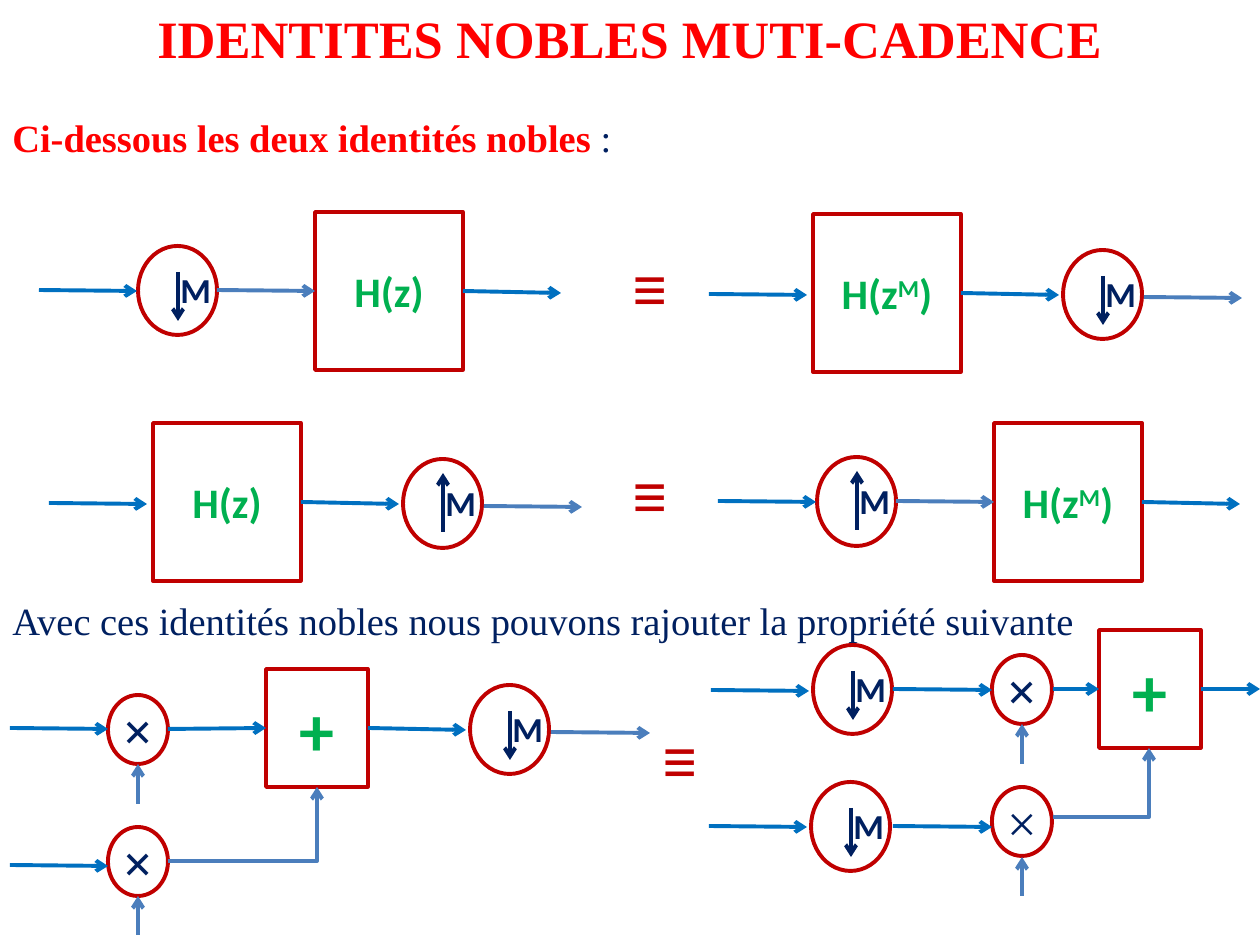
from lxml import etree
from pptx import Presentation
from pptx.dml.color import RGBColor
from pptx.enum.shapes import MSO_CONNECTOR, MSO_SHAPE
from pptx.enum.text import MSO_ANCHOR, PP_ALIGN
from pptx.oxml.ns import qn
from pptx.util import Pt

RECTANGLE, OVAL = MSO_SHAPE.RECTANGLE, MSO_SHAPE.OVAL
STRAIGHT, ELBOW = MSO_CONNECTOR.STRAIGHT, MSO_CONNECTOR.ELBOW
LEFT, CENTER, MIDDLE = PP_ALIGN.LEFT, PP_ALIGN.CENTER, MSO_ANCHOR.MIDDLE

RED = RGBColor(0xFF, 0x00, 0x00)
DARK_RED = RGBColor(0xC0, 0x00, 0x00)
NAVY = RGBColor(0x00, 0x20, 0x60)
GREEN = RGBColor(0x00, 0xB0, 0x50)
BLUE = RGBColor(0x00, 0x70, 0xC0)
STEEL = RGBColor(0x4B, 0x7E, 0xBC)

PX = 914400 / 126
JOIN_TOLERANCE = 4

TITLE = {"name": "Times New Roman", "size": 30, "color": RED, "bold": True}
LEAD = {"name": "Times New Roman", "size": 22, "color": RED, "bold": True}
BODY = {**LEAD, "color": NAVY, "bold": False}
RATE = {"name": "Calibri", "size": 20, "color": NAVY, "bold": True}
FILTER = {"name": "Calibri", "size": 24, "color": GREEN, "bold": True}
POWER = {**FILTER, "baseline": 30000}
SUM = {**FILTER, "size": 40}
EQUIVALENT = {"name": "Calibri", "size": 40, "color": DARK_RED, "bold": False}
PRODUCT = {"name": "Times New Roman", "size": 30, "color": NAVY, "bold": True}
LIGHT_PRODUCT = {**PRODUCT, "bold": False}

# left, top, width, height, alignment, runs
TEXTS = [
    (0, 0, 1260, 77, CENTER, [("IDENTITES NOBLES MUTI-CADENCE", TITLE)]),
    (0, 108, 1131, 59, LEFT, [("Ci-dessous les deux identités nobles ", LEAD), (":", BODY)]),
    (0, 591, 1260, 59, LEFT,
     [("Avec ces identités nobles nous pouvons rajouter la propriété suivante", BODY)]),
]
EQUIVALENCES = [(620, 237), (620, 444), (650, 709)]

H_Z = [("H(z)", FILTER)]
H_ZM = [("H(z", FILTER), ("M", POWER), (")", FILTER)]
FILTER_SIZE, SUM_SIZE = (148, 158), (102, 118)
# left, top, size, runs
BLOCKS = [
    (315, 212, FILTER_SIZE, H_Z),
    (813, 214, FILTER_SIZE, H_ZM),
    (153, 423, FILTER_SIZE, H_Z),
    (994, 423, FILTER_SIZE, H_ZM),
    (266, 669, SUM_SIZE, [("+", SUM)]),
    (1099, 630, SUM_SIZE, [("+", SUM)]),
]

RATE_SIZE, PRODUCT_SIZE = (79, 89), (60, 69)
DOWN, UP = (26, 75), (73, 14)  # arrow start and end below the oval's top
RATE_CHANGERS = [
    (138, 246, DOWN), (1063, 250, DOWN), (403, 459, UP), (817, 457, UP),
    (470, 685, DOWN), (813, 645, DOWN), (811, 782, DOWN),
]
PRODUCTS = [
    (108, 695, PRODUCT), (108, 827, PRODUCT),
    (992, 655, PRODUCT), (992, 787, LIGHT_PRODUCT),
]

# from x, from y, to x, to y
WIRES = {
    STEEL: [
        (217, 290, 315, 291), (1144, 297, 1242, 298), (484, 506, 582, 507),
        (896, 501, 994, 502), (551, 732, 650, 733),
        (138, 804, 138, 764), (138, 935, 138, 896),
        (1022, 764, 1022, 724), (1022, 896, 1022, 857),
    ],
    BLUE: [
        (39, 290, 137, 291), (463, 292, 561, 293), (709, 294, 807, 295),
        (961, 294, 1059, 295), (49, 503, 147, 504), (301, 503, 399, 504),
        (718, 501, 816, 502), (1142, 503, 1240, 504), (10, 728, 108, 729),
        (168, 729, 266, 730), (368, 729, 466, 730), (10, 865, 108, 866),
        (711, 690, 809, 691), (893, 689, 992, 690), (1053, 689, 1102, 690),
        (1201, 690, 1260, 689), (709, 826, 807, 827), (893, 826, 992, 827),
    ],
}
ELBOWS = [(168, 861, 317, 787), (1053, 817, 1149, 748)]


def emu(*lengths):
    return [round(length * PX) for length in lengths]


def write(frame, runs, align):
    para = frame.paragraphs[0]
    para.alignment = align
    for text, style in runs:
        span = para.add_run()
        span.text = text
        for key, value in style.items():
            if key == "color":
                span.font.color.rgb = value
            elif key == "baseline":
                span._r.get_or_add_rPr().set("baseline", str(value))
            else:
                setattr(span.font, key, Pt(value) if key == "size" else value)


def add_text(page, left, top, width, height, align, runs):
    frame = page.shapes.add_textbox(*emu(left, top, width, height)).text_frame
    frame.word_wrap = True
    write(frame, runs, align)


def add_outline(page, kind, left, top, size, weight, runs=()):
    box = page.shapes.add_shape(kind, *emu(left, top, *size))
    box.shadow.inherit = False
    box.fill.background()
    box.line.color.rgb = DARK_RED
    box.line.width = Pt(weight)
    frame = box.text_frame
    frame.word_wrap = False
    frame.vertical_anchor = MIDDLE
    for side in ("left", "top", "right", "bottom"):
        setattr(frame, f"margin_{side}", 0)
    write(frame, runs, CENTER)
    return box


def add_arrow(page, ends, color, kind=STRAIGHT):
    wire = page.shapes.add_connector(kind, *emu(*ends))
    wire.line.color.rgb = color
    wire.line.width = Pt(2.25)
    etree.SubElement(wire.line._get_or_add_ln(), qn("a:tailEnd"), type="arrow")
    properties = wire._element.spPr
    etree.SubElement(properties, qn("a:effectLst"))
    if kind == ELBOW:
        properties.find(qn("a:prstGeom")).set("prst", "bentConnector2")
    return wire


def join(connect, x, y, boxes):
    """Attach a wire end to the block whose side has its middle at that point."""
    for (left, top, (width, height), _), box in zip(BLOCKS, boxes):
        sides = [(left + width / 2, top), (left, top + height / 2),
                 (left + width / 2, top + height), (left + width, top + height / 2)]
        for site, (side_x, side_y) in enumerate(sides):
            if max(abs(side_x - x), abs(side_y - y)) <= JOIN_TOLERANCE:
                connect(box, site)


def main():
    deck = Presentation()
    deck.slide_width, deck.slide_height = emu(1260, 945)
    page = deck.slides.add_slide(deck.slide_layouts[6])

    for text in TEXTS:
        add_text(page, *text)
    for left, top in EQUIVALENCES:
        add_text(page, left, top, 118, 97, LEFT, [("≡", EQUIVALENT)])

    boxes = [add_outline(page, RECTANGLE, left, top, size, 2, runs)
             for left, top, size, runs in BLOCKS]
    for left, top, style in PRODUCTS:
        add_outline(page, OVAL, left, top, PRODUCT_SIZE, 2.25, [("×", style)])
    for left, top, (start, end) in RATE_CHANGERS:
        add_outline(page, OVAL, left, top, RATE_SIZE, 2.25)
        add_arrow(page, (left + 40, top + start, left + 40, top + end), NAVY)
        add_text(page, left + 30, top + 16, 69, 55, LEFT, [("M", RATE)])

    for color, wires in WIRES.items():
        for ends in wires:
            wire = add_arrow(page, ends, color)
            join(wire.begin_connect, *ends[:2], boxes)
            join(wire.end_connect, *ends[2:], boxes)
    for ends in ELBOWS:
        add_arrow(page, ends, STEEL, ELBOW)

    deck.save("out.pptx")


if __name__ == "__main__":
    main()
